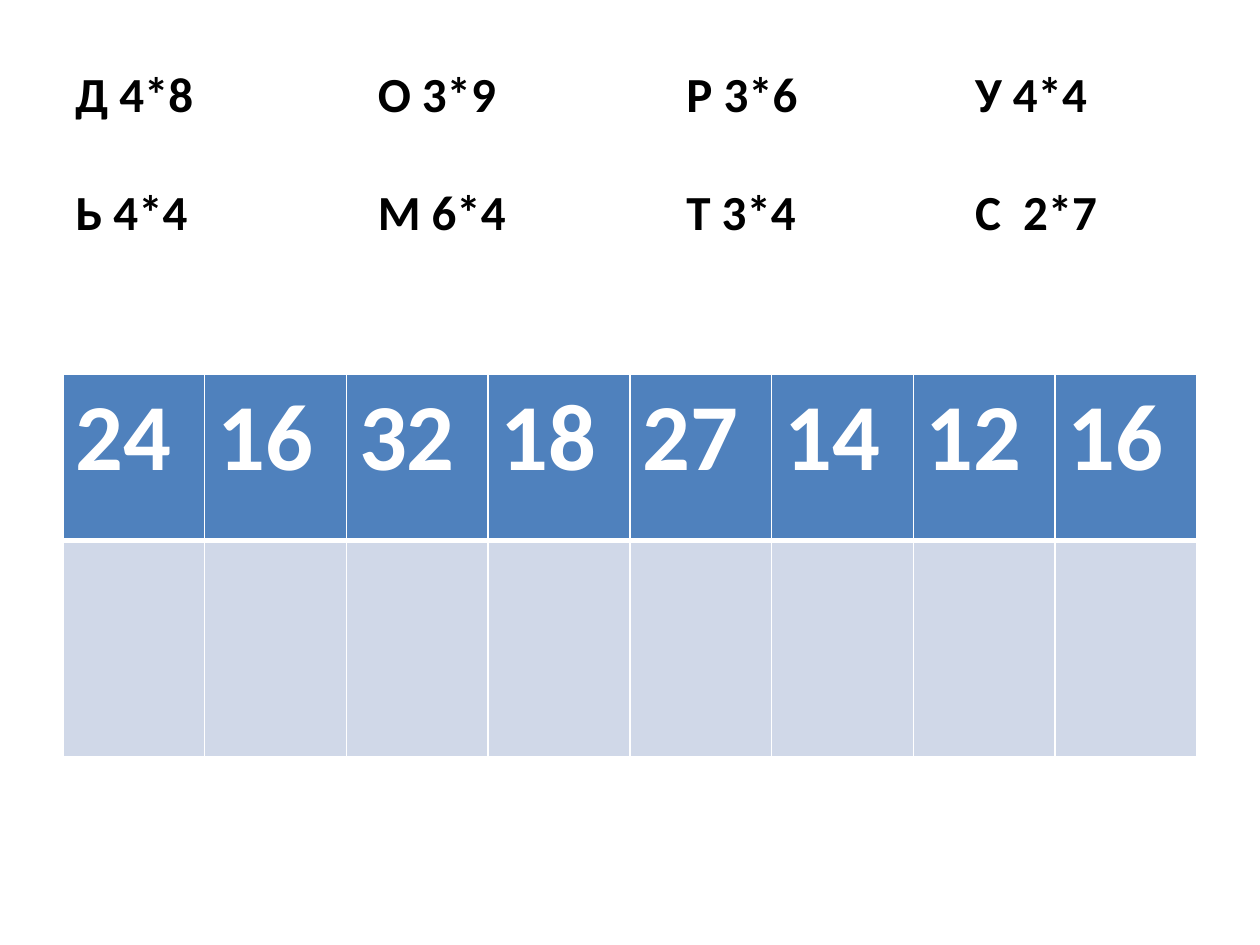
from dataclasses import dataclass

from lxml import etree
from pptx import Presentation
from pptx import util as u
from pptx.dml.color import RGBColor
from pptx.enum import text
from pptx.oxml.ns import qn


@dataclass(frozen=True)
class Theme:
    font: str = "Calibri"
    ink: str = "000000"
    white: str = "FFFFFF"
    header: str = "4F81BD"
    body: str = "D0D8E8"
    task_size: int = 28
    number_size: int = 54
    thin: float = 1
    thick: float = 3


class Sheet:
    def __init__(self, prs, theme):
        self.theme = theme
        self.s = prs.slides.add_slide(prs.slide_layouts[6])

    def style(self, p, size, color):
        p.font.name = self.theme.font
        p.font.size = u.Pt(size)
        p.font.bold = True
        p.font.color.rgb = RGBColor.from_string(color)

    def tasks(self, rows, box, stops, gap):
        tf = self.s.shapes.add_textbox(*map(u.Inches, box)).text_frame
        tf.word_wrap = True
        tf.vertical_anchor = text.MSO_ANCHOR.MIDDLE
        for i, row in enumerate(rows):
            p = tf.add_paragraph() if i else tf.paragraphs[0]
            p.text = "\t".join(row)
            p.space_before = u.Pt(gap if i else 0)
            tabs = etree.SubElement(p._p.get_or_add_pPr(), qn("a:tabLst"))
            for stop in stops:
                etree.SubElement(tabs, qn("a:tab"), pos=str(u.Inches(stop)), algn="l")
            self.style(p, self.theme.task_size, self.theme.ink)

    def borders(self, cell, **widths):
        tcPr = cell._tc.get_or_add_tcPr()
        for side in "LRTB":
            width = widths.get(side, self.theme.thin)
            ln = etree.SubElement(tcPr, qn(f"a:ln{side}"), w=str(u.Pt(width)))
            fill = etree.SubElement(ln, qn("a:solidFill"))
            etree.SubElement(fill, qn("a:srgbClr"), val=self.theme.white)

    def answers(self, numbers, box, heights):
        t = self.theme
        frame = self.s.shapes.add_table(2, len(numbers), *map(u.Inches, box))
        table = frame.table
        for row, height in zip(table.rows, heights):
            row.height = u.Inches(height)
        for i, number in enumerate(numbers):
            head, blank = table.cell(0, i), table.cell(1, i)
            head.text = number
            self.style(head.text_frame.paragraphs[0], t.number_size, t.white)
            self.borders(head, B=t.thick)
            self.borders(blank, T=t.thick)
            for cell, color in ((head, t.header), (blank, t.body)):
                cell.fill.solid()
                cell.fill.fore_color.rgb = RGBColor.from_string(color)


def main():
    prs = Presentation()
    prs.slide_width, prs.slide_height = u.Inches(10), u.Inches(7.5)
    sheet = Sheet(prs, Theme())
    sheet.tasks(
        [("Д 4*8", "О 3*9", "Р 3*6", "У 4*4"),
         ("Ь 4*4", "М 6*4", "Т 3*4", "С  2*7")],
        box=(0.5, 0.3, 9, 1.81), stops=(2.4, 4.85, 7.14), gap=33.5)
    sheet.answers(["24", "16", "32", "18", "27", "14", "12", "16"],
                  box=(0.5, 2.97, 9, 3.04), heights=(1.32, 1.72))
    prs.save("out.pptx")


if __name__ == "__main__":
    main()
